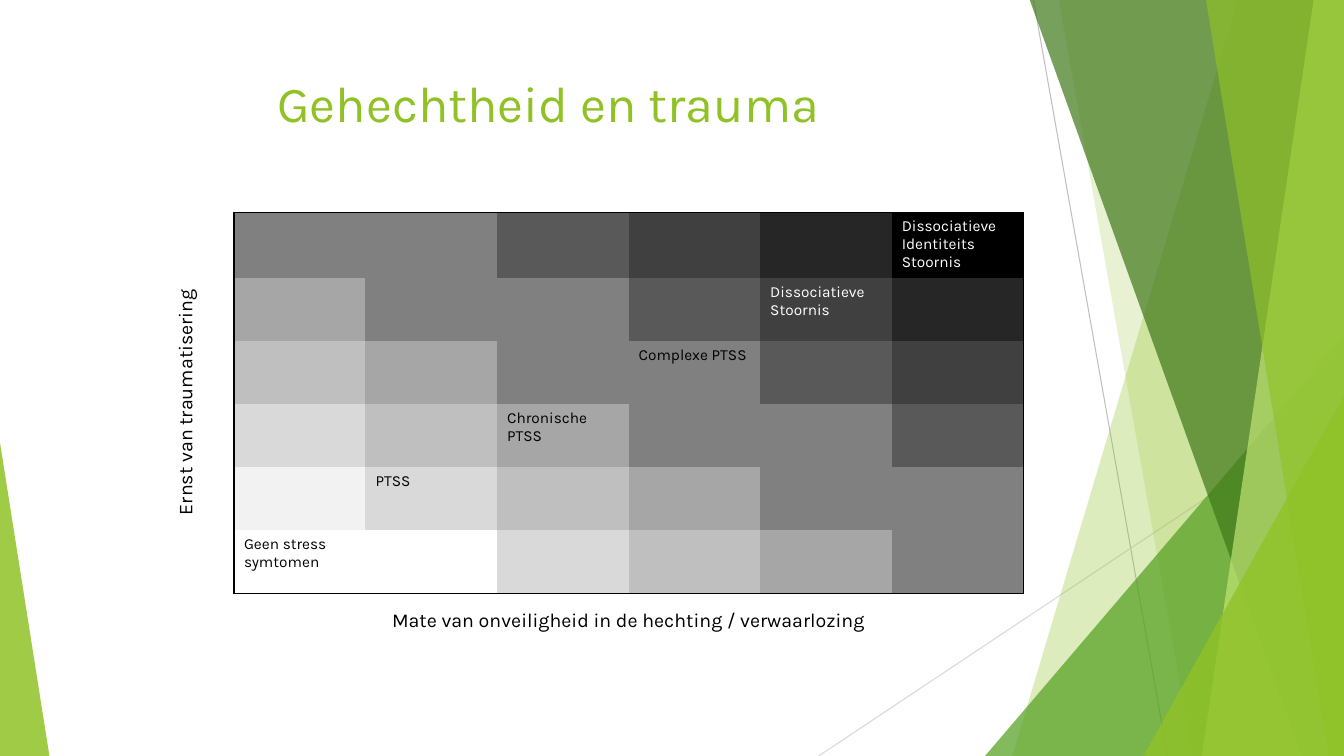
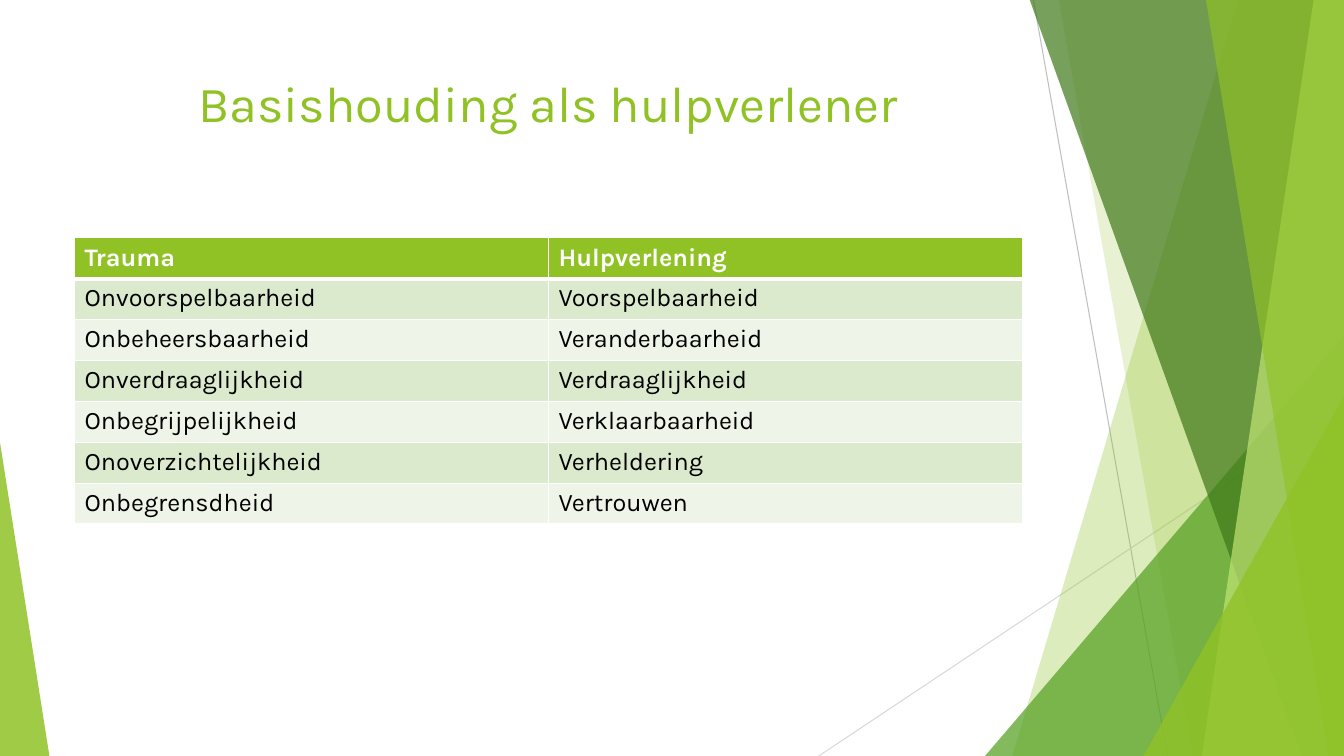
import pptx
import pptx.util
import pptx.dml.color
import pptx.enum.shapes
import pptx.enum.text
import pptx.oxml
import pptx.oxml.ns

PX = 9144  # EMU per px, 100 px to the inch
W, H = 1333, 750

THEME = {
    "font": "Karla",
    "green": "90C226", "mid": "54A021", "dark": "3F7819", "light": "C0E474",
    "black": "000000", "white": "FFFFFF",
    "line_dark": "BFBFBF", "line_light": "D9D9D9",
    "bands": ("DBE9CD", "EEF4E8"),
    "title": 36, "body": 18, "axis": 14, "label": 11,
}
NO_STYLE = "{2D5ABB26-0587-4C30-8999-92F81FD0307C}"

# Background, back to front
LINES = [((1025, 0), (1158, H), "line_dark"), ((W, 403), (812, H), "line_light")]
DECOR = [  # band: top x, bottom x; triangle: left, top, right, apex
    ("band", (1228, 1004), "green", 30),
    ("band", (1050, 1183), "green", 20),
    ("triangle", (977, 333, W, 1), "mid", 72),
    ("band", (1021, 1291), "dark", 70),
    ("band", (1303, 1192), "light", 70),
    ("band", (1196, 1318), "green", 65),
    ("triangle", (1134, 393, W, 1), "green", 80),
    ("triangle", (0, 439, 49, 0), "green", 85),
]

# Slide 1: shade by steps from the bottom left, labels along the diagonal
HEAT_TITLE = "Gehechtheid en trauma"
SHADES = ["FFFFFF", "F2F2F2", "D9D9D9", "BFBFBF", "A6A6A6", "808080",
          "808080", "595959", "404040", "262626", "000000"]
LEVELS = ["Geen stress symtomen", "PTSS", "Chronische PTSS", "Complexe PTSS",
          "Dissociatieve Stoornis", "Dissociatieve Identiteits Stoornis"]
WHITE_FROM = 4
AXIS_Y = "Ernst van traumatisering"
AXIS_X = "Mate van onveiligheid in de hechting / verwaarlozing"

# Slide 2
PAIRS_TITLE = "Basishouding als hulpverlener"
PAIRS = [
    ("Trauma", "Hulpverlening"),
    ("Onvoorspelbaarheid", "Voorspelbaarheid"),
    ("Onbeheersbaarheid", "Veranderbaarheid"),
    ("Onverdraaglijkheid", "Verdraaglijkheid"),
    ("Onbegrijpelijkheid", "Verklaarbaarheid"),
    ("Onoverzichtelijkheid", "Verheldering"),
    ("Onbegrensdheid", "Vertrouwen"),
]


def px(*values):
    return [v * PX for v in values]


def rgb(name):
    return pptx.dml.color.RGBColor.from_string(THEME.get(name, name))


def set_text(tf, text, size, color, bold=False, center=False):
    p = tf.paragraphs[0]
    p.text = text
    p.font.name = THEME["font"]
    p.font.size = pptx.util.Pt(THEME[size])
    p.font.color.rgb = rgb(color)
    p.font.bold = bold
    if center:
        p.alignment = pptx.enum.text.PP_ALIGN.CENTER


def add_text(s, text, box, size, color, rotation=0):
    sp = s.shapes.add_textbox(*px(*box))
    sp.rotation = rotation
    sp.text_frame.word_wrap = True
    set_text(sp.text_frame, text, size, color, center=True)


def add_decor(s):
    for start, end, color in LINES:
        line = s.shapes.add_connector(
            pptx.enum.shapes.MSO_CONNECTOR.STRAIGHT, *px(*start, *end))
        line.line.color.rgb = rgb(color)
        line.line.width = pptx.util.Pt(0.75)
        pptx.oxml.ns.qn("a:effectLst")
        line._element.spPr.append(pptx.oxml.parse_xml(
            f"<a:effectLst {pptx.oxml.ns.nsdecls('a')}/>"))
    for kind, geometry, color, opacity in DECOR:
        if kind == "band":
            top, bottom = geometry
            outline = s.shapes.build_freeform(top, -1, scale=PX)
            outline.add_line_segments([(W, -1), (W, H), (bottom, H)], close=True)
            sp = outline.convert_to_shape()
        else:
            left, top, right, apex = geometry
            sp = s.shapes.add_shape(
                pptx.enum.shapes.MSO_SHAPE.ISOSCELES_TRIANGLE,
                *px(left, top, right - left, H - top))
            sp.adjustments[0] = apex
        sp.shadow.inherit = False
        sp.line.fill.background()
        sp.fill.solid()
        sp.fill.fore_color.rgb = rgb(color)
        clr = sp._element.spPr.find(".//" + pptx.oxml.ns.qn("a:srgbClr"))
        clr.append(pptx.oxml.parse_xml(
            f"<a:alpha {pptx.oxml.ns.nsdecls('a')} val=\"{opacity * 1000}\"/>"))


def add_slide(prs, title):
    s = prs.slides.add_slide(prs.slide_layouts[6])
    add_decor(s)
    add_text(s, title, (74, 67, 940, 144), "title", "green")
    return s


def add_table(s, rows, cols, box):
    table = s.shapes.add_table(rows, cols, *px(*box)).table
    style = table._tbl.tblPr.find(pptx.oxml.ns.qn("a:tableStyleId"))
    style.text = NO_STYLE
    return table


def format_cell(cell, fill, borders, border_color):
    """Borders map a side (L, R, T, B) to a width in points."""
    tcPr = cell._tc.get_or_add_tcPr()
    for side in "LRTB":
        if side in borders:
            tcPr.append(pptx.oxml.parse_xml(
                f"<a:ln{side} {pptx.oxml.ns.nsdecls('a')}"
                f" w=\"{pptx.util.Pt(borders[side])}\"><a:solidFill>"
                f"<a:srgbClr val=\"{rgb(border_color)}\"/>"
                f"</a:solidFill></a:ln{side}>"))
    cell.fill.solid()
    cell.fill.fore_color.rgb = rgb(fill)


def build_heat_slide(prs):
    s = add_slide(prs, HEAT_TITLE)
    n = len(LEVELS)
    table = add_table(s, n, n, (232, 211, 783, 375))
    for row in range(n):
        up = n - 1 - row
        for col in range(n):
            steps = up + col
            # The bottom row stays white for its first two cells
            shade = "white" if up == 0 and col < 2 else SHADES[steps]
            edges = {"L": col == 0, "R": col == n - 1, "T": row == 0, "B": up == 0}
            cell = table.cell(row, col)
            format_cell(cell, shade, {k: 1 for k, on in edges.items() if on}, "black")
            if col == up:
                set_text(cell.text_frame, LEVELS[col], "label",
                         "white" if col >= WHITE_FROM else "black")
    add_text(s, AXIS_Y, (-4, 382, 375, 34), "axis", "black", rotation=270)
    add_text(s, AXIS_X, (232, 598, 783, 34), "axis", "black")


def build_pairs_slide(prs):
    s = add_slide(prs, PAIRS_TITLE)
    table = add_table(s, len(PAIRS), 2, (74, 236, 940, 284))
    for i, pair in enumerate(PAIRS):
        header = i == 0
        fill = "green" if header else THEME["bands"][(i - 1) % 2]
        borders = {"L": 1, "R": 1, "T": 3 if i == 1 else 1, "B": 3 if header else 1}
        for j, text in enumerate(pair):
            cell = table.cell(i, j)
            format_cell(cell, fill, borders, "white")
            set_text(cell.text_frame, text, "body",
                     "white" if header else "black", bold=header)


def main():
    prs = pptx.Presentation()
    prs.slide_width, prs.slide_height = px(W, H)
    build_heat_slide(prs)
    build_pairs_slide(prs)
    prs.save("out.pptx")


if __name__ == "__main__":
    main()
